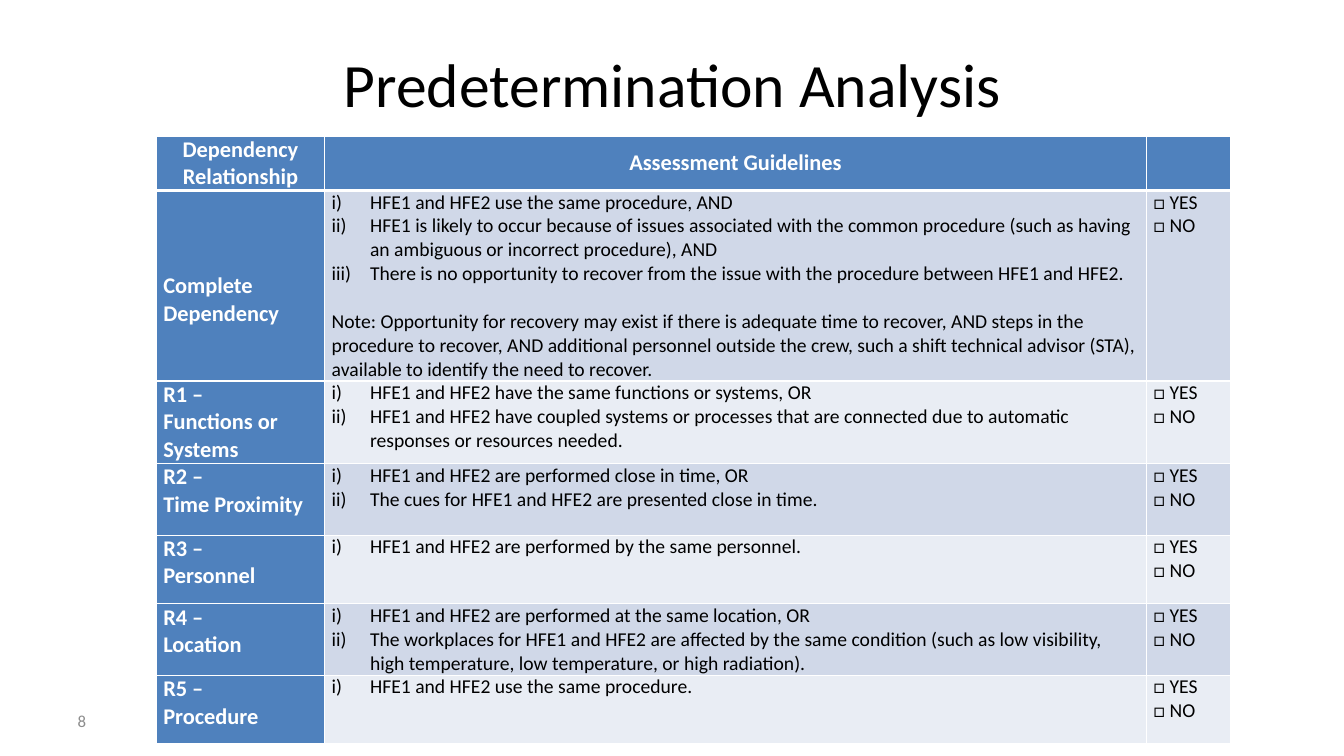
from lxml.etree import SubElement
from pptx import Presentation
from pptx.dml.color import RGBColor
from pptx.enum.text import MSO_ANCHOR, PP_ALIGN
from pptx.oxml.ns import qn
from pptx.util import Inches, Pt

WIDE, HIGH = Inches(13.33), Inches(7.5)
WHITE, BLACK, GRAY = "FFFFFF", "000000", "8C8C8C"
BLUE, BANDS = "4F81BD", ("D0D8E8", "E9EDF4")
COLS = (12.53, 61.14, 6.3)
ROWS = (7.2, 25.2, 10.93, 9.47, 9.07, 9.47, 9.07)
HEAD = {"size": Pt(16), "bold": True}
BODY = {"size": Pt(14), "bold": False}
CELL = {"margin_left": Inches(0.07), "margin_right": Inches(0.07),
        "margin_top": 0, "margin_bottom": 0}
NOTE = ("Note: Opportunity for recovery may exist if there is adequate time to recover, "
        "AND steps in the procedure to recover, AND additional personnel outside the crew, "
        "such a shift technical advisor (STA), available to identify the need to recover.")
RULES = [
    (["Complete Dependency"],
     ["HFE1 and HFE2 use the same procedure, AND",
      "HFE1 is likely to occur because of issues associated with the common procedure "
      "(such as having an ambiguous or incorrect procedure), AND",
      "There is no opportunity to recover from the issue with the procedure between HFE1 and HFE2."]),
    (["R1 –", "Functions or Systems"],
     ["HFE1 and HFE2 have the same functions or systems, OR",
      "HFE1 and HFE2 have coupled systems or processes that are connected due to automatic "
      "responses or resources needed."]),
    (["R2 –", "Time Proximity"],
     ["HFE1 and HFE2 are performed close in time, OR",
      "The cues for HFE1 and HFE2 are presented close in time."]),
    (["R3 –", "Personnel"],
     ["HFE1 and HFE2 are performed by the same personnel."]),
    (["R4 –", "Location"],
     ["HFE1 and HFE2 are performed at the same location, OR",
      "The workplaces for HFE1 and HFE2 are affected by the same condition (such as low "
      "visibility, high temperature, low temperature, or high radiation)."]),
    (["R5 –", "Procedure"],
     ["HFE1 and HFE2 use the same procedure."]),
]


def across(share):
    return round(WIDE * share / 100)


def down(share):
    return round(HIGH * share / 100)


def tint(code):
    return RGBColor.from_string(code)


def apply(item, form):
    for name, value in form.items():
        setattr(item, name, value)


def number(para):
    props = para._p.get_or_add_pPr()
    props.set("marL", str(Inches(0.38)))
    props.set("indent", str(-Inches(0.38)))
    SubElement(props, qn("a:buFont"), typeface="+mj-lt")
    SubElement(props, qn("a:buAutoNum"), type="romanLcParenR")


def write(frame, lines, form, color, align=PP_ALIGN.LEFT, listed=False):
    for index, line in enumerate(lines):
        para = frame.paragraphs[0] if index == 0 else frame.add_paragraph()
        if listed:
            number(para)
        para.text = line
        para.alignment = align
        apply(para.font, {"name": "Calibri", **form})
        para.font.color.rgb = tint(color)


def label(slide, text, place, size, color, align=PP_ALIGN.LEFT):
    left, top, width, height = place
    box = slide.shapes.add_textbox(across(left), down(top), across(width), down(height))
    apply(box.text_frame, {"word_wrap": True, "vertical_anchor": MSO_ANCHOR.MIDDLE})
    write(box.text_frame, [text], {"size": Pt(size)}, color, align)


def paint(cell, color, top=1, base=1):
    props = cell._tc.get_or_add_tcPr()
    for side, weight in (("L", 1), ("R", 1), ("T", top), ("B", base)):
        line = SubElement(props, qn(f"a:ln{side}"), w=str(Pt(weight)))
        solid = SubElement(line, qn("a:solidFill"))
        SubElement(solid, qn("a:srgbClr"), val=WHITE)
    cell.fill.solid()
    cell.fill.fore_color.rgb = tint(color)
    apply(cell, CELL)


def build_grid(slide):
    frame = slide.shapes.add_table(len(ROWS), len(COLS), across(11.63), down(18),
                                   across(sum(COLS)), down(sum(ROWS)))
    grid = frame.table
    for col, share in zip(grid.columns, COLS):
        col.width = across(share)
    for row, share in zip(grid.rows, ROWS):
        row.height = down(share)
    return grid


def fill_head(grid):
    for index, title in enumerate(("Dependency Relationship", "Assessment Guidelines", "")):
        cell = grid.cell(0, index)
        paint(cell, BLUE, base=3)
        cell.vertical_anchor = MSO_ANCHOR.MIDDLE
        write(cell.text_frame, [title], HEAD, WHITE, PP_ALIGN.CENTER)


def fill_row(grid, row, names, rules):
    name, guide, check = (grid.cell(row, col) for col in range(3))
    band = BANDS[(row - 1) % 2]
    for cell, color in ((name, BLUE), (guide, band), (check, band)):
        paint(cell, color, top=3 if row == 1 else 1)
    write(name.text_frame, names, HEAD, WHITE)
    write(guide.text_frame, rules, BODY, BLACK, listed=True)
    write(check.text_frame, ["□ YES", "□ NO"], BODY, BLACK)


def add_note(grid):
    para = grid.cell(1, 1).text_frame.add_paragraph()
    para.text = NOTE
    para.space_before = Pt(17)
    apply(para.font, {"name": "Calibri", **BODY})
    para.font.color.rgb = tint(BLACK)
    apply(grid.cell(1, 0), {"vertical_anchor": MSO_ANCHOR.MIDDLE, "margin_top": down(3.7)})


def main():
    deck = Presentation()
    apply(deck, {"slide_width": WIDE, "slide_height": HIGH})
    slide = deck.slides.add_slide(deck.slide_layouts[6])
    label(slide, "Predetermination Analysis", (16.28, 4, 67.52, 14), 44, BLACK, PP_ALIGN.CENTER)
    grid = build_grid(slide)
    fill_head(grid)
    for row, (names, rules) in enumerate(RULES, 1):
        fill_row(grid, row, names, rules)
    add_note(grid)
    label(slide, "8", (5.03, 92.67, 23.33, 5.33), 12, GRAY)
    deck.save("out.pptx")


if __name__ == "__main__":
    main()
